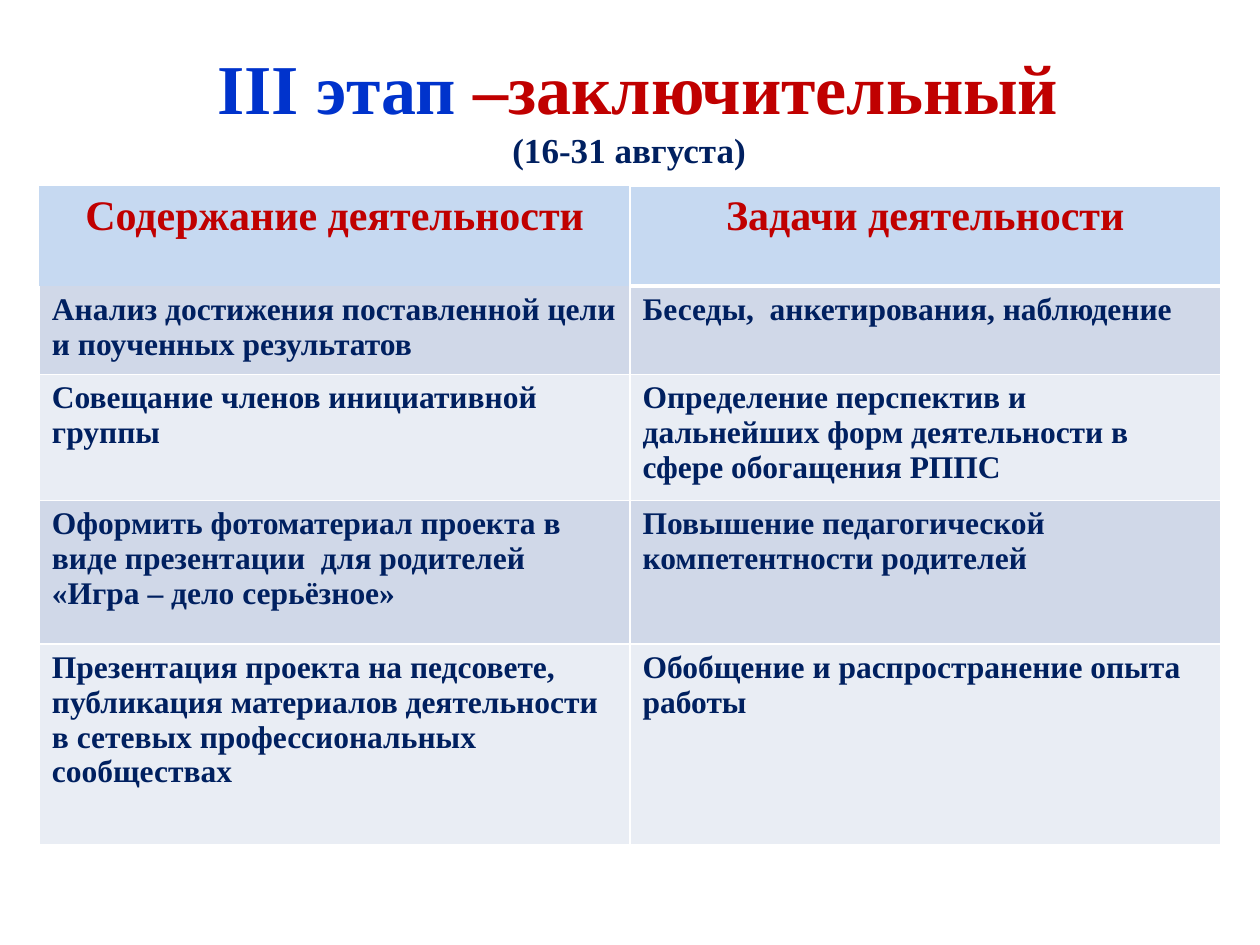
from typing import NamedTuple

from lxml.etree import SubElement
from pptx import Presentation
from pptx.dml.color import RGBColor
from pptx.enum.text import MSO_ANCHOR, MSO_AUTO_SIZE, PP_ALIGN
from pptx.oxml.ns import qn
from pptx.util import Pt

WHITE = RGBColor(0xFF, 0xFF, 0xFF)
RED = RGBColor(0xC0, 0x00, 0x00)
BLUE = RGBColor(0x00, 0x33, 0xCC)
NAVY = RGBColor(0x00, 0x20, 0x60)
HEADER_FILL = RGBColor(0xC6, 0xD9, 0xF1)
BAND_FILLS = (RGBColor(0xD0, 0xD8, 0xE8), RGBColor(0xE9, 0xED, 0xF4))
FONT = "Times New Roman"
COLUMN_WIDTH = 337.5


class Span(NamedTuple):
    text: str
    size: float
    color: RGBColor


class Activity(NamedTuple):
    content: str
    task: str
    height: float


HEADER = Activity("Содержание деятельности", "Задачи деятельности", 57)
ACTIVITIES = (
    Activity("Анализ достижения поставленной цели и поученных результатов",
             "Беседы,  анкетирования, наблюдение", 50.5),
    Activity("Совещание членов инициативной группы",
             "Определение перспектив и дальнейших форм деятельности "
             "в сфере обогащения РППС", 72),
    Activity("Оформить фотоматериал проекта в виде презентации  для родителей "
             "«Игра – дело серьёзное»",
             "Повышение педагогической компетентности родителей", 82),
    Activity("Презентация проекта на педсовете, публикация материалов "
             "деятельности в сетевых профессиональных сообществах",
             "Обобщение и распространение опыта работы", 115),
)
TITLE_LINES = (
    (Span(" III этап ", 40, BLUE), Span("–заключительный", 40, RED)),
    (Span("(16-31 августа)", 20, NAVY),),
)


def add_span(paragraph, span: Span) -> None:
    run = paragraph.add_run()
    run.text = span.text
    run.font.name = FONT
    run.font.size = Pt(span.size)
    run.font.bold = True
    run.font.color.rgb = span.color


def set_borders(cell, bottom: float, visible: bool) -> None:
    """Put the four border lines before the cell fill, as the schema demands."""
    properties = cell._tc.get_or_add_tcPr()
    for index, side in enumerate(("lnL", "lnR", "lnT", "lnB")):
        width = bottom if side == "lnB" else 1
        line = SubElement(properties, qn(f"a:{side}"), w=str(Pt(width)))
        if visible:
            fill = SubElement(line, qn("a:solidFill"))
            SubElement(fill, qn("a:srgbClr"), val=str(WHITE))
        else:
            SubElement(line, qn("a:noFill"))
        properties.insert(index, line)


def fill_title(title) -> None:
    title.left, title.top, title.width, title.height = Pt(16.5), Pt(20), Pt(686), Pt(83)
    frame = title.text_frame
    frame.word_wrap = True
    frame.auto_size = MSO_AUTO_SIZE.NONE
    frame.vertical_anchor = MSO_ANCHOR.MIDDLE
    for index, spans in enumerate(TITLE_LINES):
        paragraph = frame.add_paragraph() if index else frame.paragraphs[0]
        paragraph.alignment = PP_ALIGN.CENTER
        paragraph.space_before = Pt(0)
        for span in spans:
            add_span(paragraph, span)


def add_activity_table(shapes) -> None:
    rows = (HEADER, *ACTIVITIES)
    table = shapes.add_table(len(rows), 2, Pt(22.5), Pt(106.5), Pt(2 * COLUMN_WIDTH),
                             Pt(sum(row.height for row in rows))).table
    for column in table.columns:
        column.width = Pt(COLUMN_WIDTH)
    for row_index, activity in enumerate(rows):
        is_header = row_index == 0
        table.rows[row_index].height = Pt(activity.height)
        for column_index, text in enumerate((activity.content, activity.task)):
            cell = table.cell(row_index, column_index)
            cell.fill.solid()
            cell.fill.fore_color.rgb = (
                HEADER_FILL if is_header else BAND_FILLS[(row_index - 1) % 2])
            set_borders(cell, bottom=3 if is_header else 1,
                        visible=not is_header or column_index == 1)
            paragraph = cell.text_frame.paragraphs[0]
            paragraph.alignment = PP_ALIGN.CENTER if is_header else PP_ALIGN.LEFT
            add_span(paragraph, Span(text, 24, RED) if is_header else Span(text, 18, NAVY))


def main() -> None:
    deck = Presentation()
    deck.slide_width, deck.slide_height = Pt(720), Pt(540)
    slide = deck.slides.add_slide(deck.slide_layouts.get_by_name("Title Only"))
    fill_title(slide.shapes.title)
    add_activity_table(slide.shapes)
    deck.save("out.pptx")


if __name__ == "__main__":
    main()
